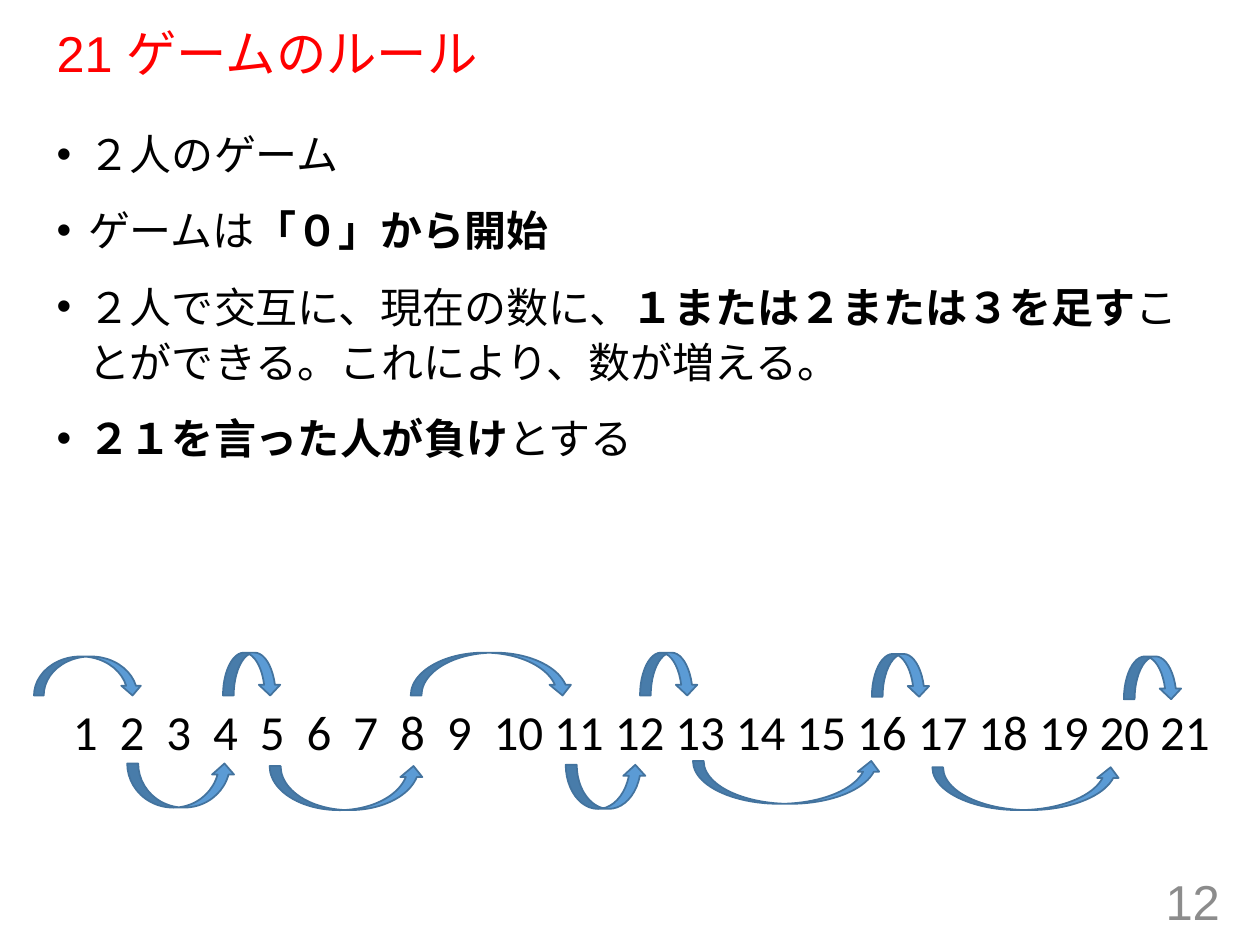
from lxml import etree
from pptx import Presentation
from pptx import util as u
from pptx.dml.color import RGBColor
from pptx.enum import shapes, text
from pptx.oxml import ns

RED = RGBColor(0xFF, 0x00, 0x00)
BLACK = RGBColor(0x00, 0x00, 0x00)
GREY = RGBColor(0x8C, 0x8C, 0x8C)
BLUE = RGBColor(0x5B, 0x9B, 0xD5)
DARK_BLUE = RGBColor(0x43, 0x73, 0x9E)
JAPANESE = "Noto Sans CJK JP"
COLUMNS, ROWS = 100, 75

RULES = [
    [("２人のゲーム", False)],
    [("ゲームは", False), ("「０」から開始", True)],
    [("２人で交互に、現在の数に、", False), ("１または２または３を足す", True),
     ("ことができる。これにより、数が増える。", False)],
    [("２１を言った人が負け", True), ("とする", False)],
]
HOPS_ABOVE = [(2.7, 52.1, 8.6, 3.1), (17.7, 51.8, 4.6, 3.4), (32.6, 51.8, 12.9, 3.4),
              (50.8, 51.8, 4.6, 3.4), (69.2, 51.9, 4.6, 3.4), (89.2, 52.1, 4.6, 3.4)]
HOPS_BELOW = [(10.1, 60.6, 8.6, 3.5), (21.4, 60.8, 12.3, 3.5), (44.9, 60.7, 6.4, 3.5),
              (55, 60.4, 15, 3.4), (74, 60.9, 15, 3.4)]
ONE_DIGIT_STEP, TWO_DIGIT_STEP = 3.71, 4.81


def apply(target, values):
    for name, value in values.items():
        setattr(target, name, value)


class GameSlide:
    def __init__(self, deck):
        self.slide = deck.slides.add_slide(deck.slide_layouts[6])
        self.column = deck.slide_width / COLUMNS
        self.row = deck.slide_height / ROWS

    def place(self, left, top, width, height):
        return (round(left * self.column), round(top * self.row),
                round(width * self.column), round(height * self.row))

    def frame(self, area, anchor=text.MSO_ANCHOR.TOP):
        frame = self.slide.shapes.add_textbox(*self.place(*area)).text_frame
        apply(frame, {"word_wrap": True, "vertical_anchor": anchor})
        return frame

    def add_words(self, paragraph, words, size, color, font, bold=False):
        run = paragraph.add_run()
        run.text = words
        apply(run.font, {"size": u.Pt(size), "name": font, "bold": bold})
        run.font.color.rgb = color
        east_asian = etree.Element(ns.qn("a:ea"), typeface=JAPANESE)
        run.font._element.find(ns.qn("a:latin")).addnext(east_asian)

    def label(self, area, words, size, color, font, **layout):
        paragraph = self.frame(area, text.MSO_ANCHOR.MIDDLE).paragraphs[0]
        apply(paragraph, layout)
        self.add_words(paragraph, words, size, color, font)

    def bullets(self, area, items, size):
        frame = self.frame(area)
        for index, item in enumerate(items):
            paragraph = frame.add_paragraph() if index else frame.paragraphs[0]
            indent = round(2.5 * self.column)
            properties = paragraph._p.get_or_add_pPr()
            apply(paragraph, {"line_spacing": 1.1, "space_before": u.Pt(12 if index else 0)})
            properties.set("marL", str(indent))
            properties.set("indent", str(-indent))
            etree.SubElement(properties, ns.qn("a:buFont"), typeface="Arial")
            etree.SubElement(properties, ns.qn("a:buChar"), char="•")
            for words, bold in item:
                self.add_words(paragraph, words, size, BLACK, JAPANESE, bold)

    def number_line(self, area, last, size):
        paragraph = self.frame(area).paragraphs[0]
        stops = etree.SubElement(paragraph._p.get_or_add_pPr(), ns.qn("a:tabLst"))
        for number in range(2, last + 1):
            offset = (min(number - 1, 9) * ONE_DIGIT_STEP
                      + max(number - 10, 0) * TWO_DIGIT_STEP)
            etree.SubElement(stops, ns.qn("a:tab"),
                             pos=str(round(offset * self.column)), algn="l")
        numbers = "\t".join(str(number) for number in range(1, last + 1))
        self.add_words(paragraph, numbers, size, BLACK, "Calibri")

    def hop(self, area, below=False):
        arrow = self.slide.shapes.add_shape(
            shapes.MSO_SHAPE.CURVED_DOWN_ARROW, *self.place(*area))
        arrow.shadow.inherit = False
        arrow.fill.solid()
        arrow.fill.fore_color.rgb = BLUE
        arrow.line.color.rgb = DARK_BLUE
        arrow.line.width = u.Pt(1)
        if below:
            arrow._element.spPr.find(ns.qn("a:xfrm")).set("flipV", "1")


def main():
    deck = Presentation()
    apply(deck, {"slide_width": u.Inches(10), "slide_height": u.Inches(7.5)})
    game = GameSlide(deck)
    game.label((3.5, 1.9, 92.5, 5.1), "21 ゲームのルール", 28.8, RED, "Arial",
               line_spacing=0.9)
    game.bullets((3.5, 9.3, 92.5, 66.4), RULES, 24)
    game.label((75.3, 69.5, 22.5, 4), "12", 28, GREY, "Arial",
               alignment=text.PP_ALIGN.RIGHT)
    game.number_line((4.8, 55.2, 93, 5.7), 21, 28)
    for below, hops in enumerate((HOPS_ABOVE, HOPS_BELOW)):
        for area in hops:
            game.hop(area, below)
    deck.save("out.pptx")


if __name__ == "__main__":
    main()
